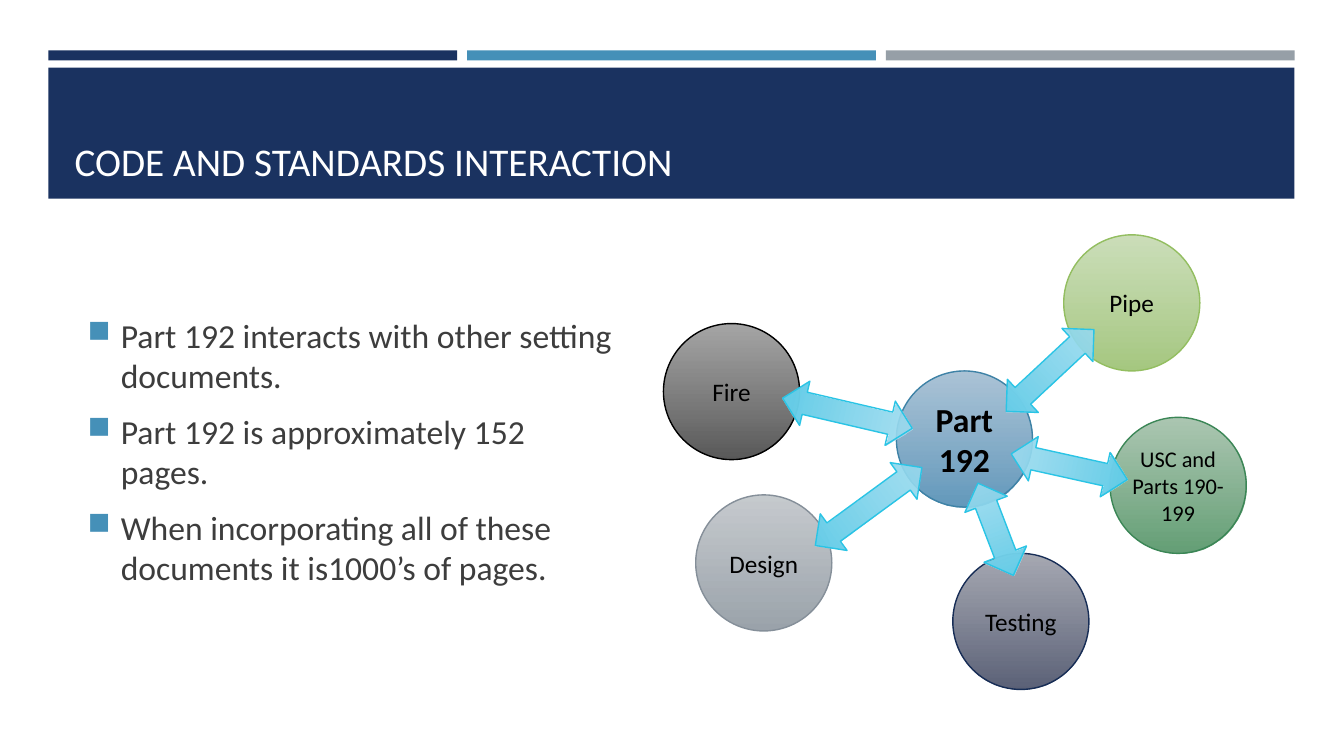
from lxml.etree import SubElement
from pptx import Presentation
from pptx.dml.color import RGBColor
from pptx.enum.shapes import MSO_SHAPE
from pptx.enum.text import MSO_ANCHOR, PP_ALIGN
from pptx.oxml.ns import qn
from pptx.util import Inches, Pt

FONT = "Calibri"
NAVY = RGBColor(0x1A, 0x32, 0x60)
BLUE = RGBColor(0x45, 0x90, 0xB8)
GREY = RGBColor(0x96, 0x9F, 0xA7)
WHITE = RGBColor(0xFF, 0xFF, 0xFF)
BLACK = RGBColor(0x00, 0x00, 0x00)
TEXT = RGBColor(0x3D, 0x3D, 0x3D)

# Gradient top, gradient bottom, outline
CYAN_STYLE = (RGBColor(0xA2, 0xDD, 0xF0), RGBColor(0x5F, 0xCC, 0xE8), RGBColor(0x2A, 0xC4, 0xE5))
BLUE_STYLE = (RGBColor(0xA2, 0xBD, 0xD2), RGBColor(0x63, 0x99, 0xBC), RGBColor(0x3E, 0x82, 0xA6))
BLACK_STYLE = (RGBColor(0x9B, 0x9B, 0x9B), RGBColor(0x59, 0x59, 0x59), BLACK)
GREY_STYLE = (RGBColor(0xC0, 0xC5, 0xC9), RGBColor(0x9B, 0xA3, 0xAB), RGBColor(0x85, 0x8F, 0x99))
LIME_STYLE = (RGBColor(0xC6, 0xDB, 0xB2), RGBColor(0xA6, 0xC8, 0x81), RGBColor(0x93, 0xBE, 0x60))
GREEN_STYLE = (RGBColor(0xA2, 0xC0, 0xA9), RGBColor(0x64, 0x9F, 0x75), RGBColor(0x3B, 0x86, 0x56))
NAVY_STYLE = (RGBColor(0x9C, 0x9F, 0xAA), RGBColor(0x5B, 0x61, 0x77), RGBColor(0x17, 0x2D, 0x56))

CIRCLE_SIZE = 1.35
ARROW_WIDTH = 0.45

# Left and top within the diagram, label, text size, bold, style
CIRCLES = [
    (2.31, 1.35, "Part 192", 24, True, BLUE_STYLE),
    (0, 0.88, "Fire", 18, False, BLACK_STYLE),
    (0.32, 2.58, "Design", 18, False, GREY_STYLE),
    (3.97, 0, "Pipe", 18, False, LIME_STYLE),
    (4.43, 1.81, "USC and Parts 190-199", 16, False, GREEN_STYLE),
    (2.87, 3.16, "Testing", 18, False, NAVY_STYLE),
]
# Left and top within the diagram, length, rotation
ARROWS = [
    (1.6, 1.11, 1.32, 103.1),
    (3.07, 2.43, 0.98, 339),
    (1.81, 2.04, 1.31, 53.8),
    (3.61, 0.75, 1.19, 47),
    (3.8, 1.71, 1.18, 282.5),
]
POINTS = [
    "Part 192 interacts with other setting documents.",
    "Part 192 is approximately 152 pages.",
    "When incorporating all of these documents it is1000’s of pages.",
]


def add_run(paragraph, text, size, color, bold=False):
    run = paragraph.add_run()
    run.text = text
    run.font.name = FONT
    run.font.size = Pt(size)
    run.font.bold = bold
    run.font.color.rgb = color


def add_bar(slide, left, top, width, height, color):
    bar = slide.shapes.add_shape(
        MSO_SHAPE.RECTANGLE, Inches(left), Inches(top), Inches(width), Inches(height))
    bar.shadow.inherit = False
    bar.fill.solid()
    bar.fill.fore_color.rgb = color
    bar.line.fill.background()


def add_gradient_shape(slide, kind, left, top, width, height, style):
    start, end, outline = style
    shape = slide.shapes.add_shape(
        kind, Inches(left), Inches(top), Inches(width), Inches(height))
    shape.shadow.inherit = False
    shape.fill.gradient()
    shape.fill.gradient_angle = 270
    for stop, color in zip(shape.fill.gradient_stops, (start, end)):
        stop.color.rgb = color
    # The top of the gradient is slightly transparent
    first_color = shape.element.spPr.find(".//" + qn("a:srgbClr"))
    SubElement(first_color, qn("a:alpha"), val="90000")
    shape.line.color.rgb = outline
    shape.line.width = Pt(1)
    return shape


def add_header(slide, left, top, width):
    # Three accent bars above the title band
    gap = 0.1
    bar_width = (width - 2 * gap) / 3
    for index, color in enumerate((NAVY, BLUE, GREY)):
        add_bar(slide, left + index * (bar_width + gap), top, bar_width, 0.1, color)
    add_bar(slide, left, top + 0.17, width, 1.3, NAVY)

    # Title, brought in front of the band
    title = slide.shapes.title
    title.left, title.top = Inches(left + 0.16), Inches(top + 0.27)
    title.width, title.height = Inches(width - 0.3), Inches(1.11)
    title.element.getparent().append(title.element)
    title.text_frame.vertical_anchor = MSO_ANCHOR.BOTTOM
    paragraph = title.text_frame.paragraphs[0]
    paragraph.alignment = PP_ALIGN.LEFT
    add_run(paragraph, "CODE AND STANDARDS INTERACTION", 28, WHITE)


def add_bullet(paragraph):
    properties = paragraph._p.get_or_add_pPr()
    properties.set("marL", str(Inches(0.33)))
    properties.set("indent", str(Inches(-0.33)))
    color = SubElement(properties, qn("a:buClr"))
    SubElement(color, qn("a:srgbClr"), val=str(BLUE))
    SubElement(properties, qn("a:buSzPct"), val="92000")
    SubElement(properties, qn("a:buChar"), char="■")


def add_points(slide, left, top, width, height):
    box = slide.shapes.add_textbox(
        Inches(left), Inches(top), Inches(width), Inches(height))
    frame = box.text_frame
    frame.word_wrap = True
    frame.vertical_anchor = MSO_ANCHOR.MIDDLE
    for index, text in enumerate(POINTS):
        paragraph = frame.add_paragraph() if index else frame.paragraphs[0]
        paragraph.space_before = Pt(5)
        paragraph.space_after = Pt(6)
        add_bullet(paragraph)
        add_run(paragraph, text, 24, TEXT)


def add_diagram(slide, left, top):
    # Documents around the central code
    for x, y, label, size, bold, style in CIRCLES:
        circle = add_gradient_shape(
            slide, MSO_SHAPE.OVAL, left + x, top + y, CIRCLE_SIZE, CIRCLE_SIZE, style)
        frame = circle.text_frame
        frame.word_wrap = True
        frame.vertical_anchor = MSO_ANCHOR.MIDDLE
        frame.margin_left = frame.margin_right = 0
        frame.margin_top = frame.margin_bottom = 0
        paragraph = frame.paragraphs[0]
        paragraph.alignment = PP_ALIGN.CENTER
        add_run(paragraph, label, size, BLACK, bold)

    # Two-way arrows
    for x, y, length, rotation in ARROWS:
        arrow = add_gradient_shape(
            slide, MSO_SHAPE.UP_DOWN_ARROW, left + x, top + y, ARROW_WIDTH, length, CYAN_STYLE)
        arrow.rotation = rotation


def main():
    presentation = Presentation()
    presentation.slide_width = Inches(13.33)
    presentation.slide_height = Inches(7.5)
    slide = presentation.slides.add_slide(presentation.slide_layouts[5])
    add_header(slide, 0.48, 0.5, 12.36)
    add_diagram(slide, 6.58, 2.33)
    add_points(slide, 0.77, 2.49, 5.4, 3.97)
    presentation.save("out.pptx")


if __name__ == "__main__":
    main()
